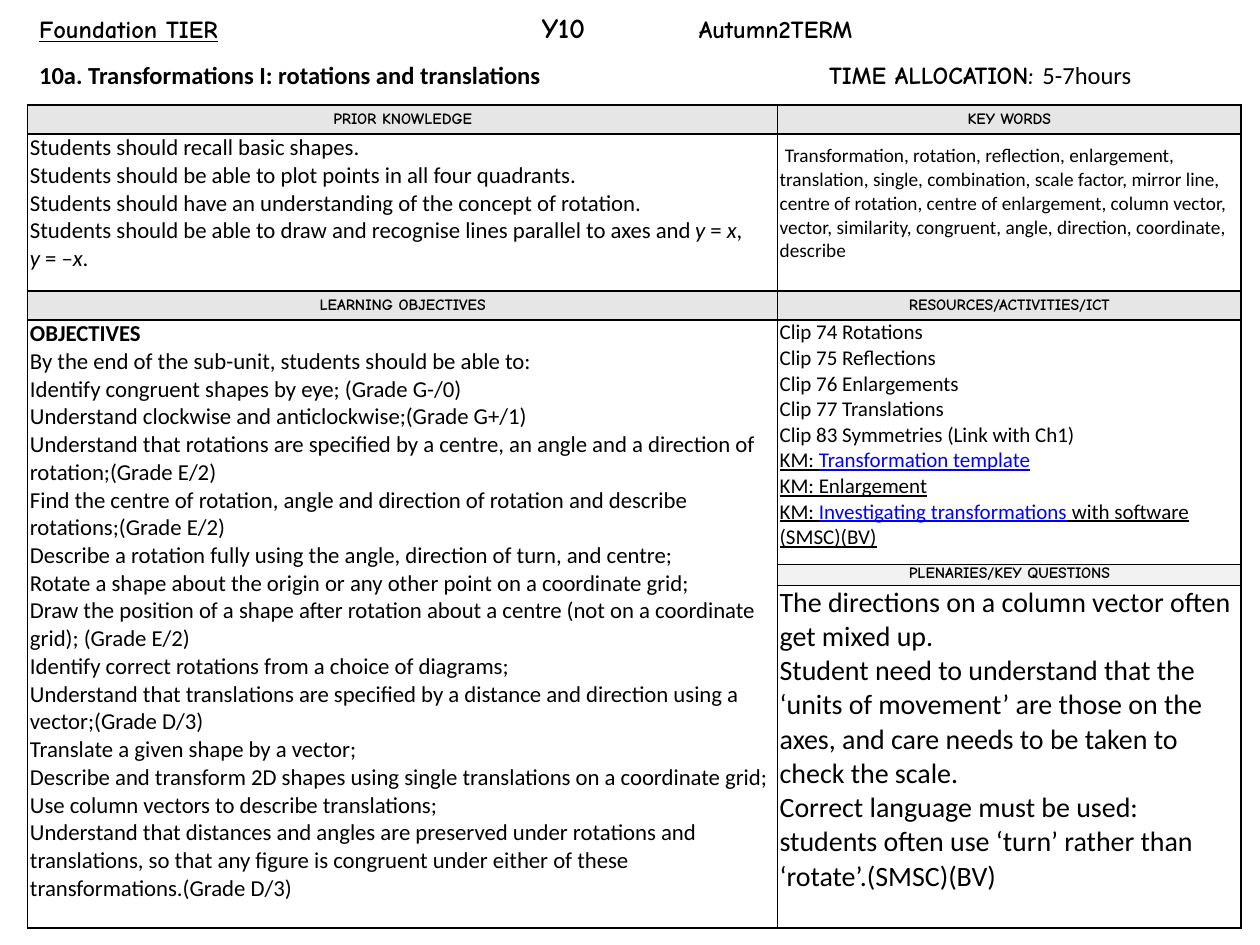
"""Build a scheme-of-work slide on rotations and translations."""
from lxml import etree
from pptx import Presentation
from pptx.dml.color import RGBColor
from pptx.enum.text import MSO_ANCHOR, PP_ALIGN
from pptx.oxml.ns import qn
from pptx.util import Pt

TOP, MID = MSO_ANCHOR.TOP, MSO_ANCHOR.MIDDLE
LEFT, CENTER = PP_ALIGN.LEFT, PP_ALIGN.CENTER
BODY, HEAD = "Calibri", "Comic Neue"
BLACK, BLUE, GREY, PALE = "000000", "0000FF", "E6E6E6", "F2F2F2"
ITALIC, LINE, LINK = {"italic": True}, {"line": True}, {"line": True, "color": BLUE}
TITLE = {"size": 14, "font": HEAD, "bold": True}

TITLES = [
    ([("Foundation TIER", {"line": True}), "\t", ("Y10", {"size": 16}), "\tAutumn2TERM"],
     (287.3, 377)),
    ([("10a. Transformations I: rotations and translations", {"font": BODY}),
      "\tTIME ALLOCATION: ", ("5-7hours", {"font": BODY, "bold": False})],
     (451.4,)),
]
PRIOR = [
    "Students should recall basic shapes.",
    "Students should be able to plot points in all four quadrants.",
    "Students should have an understanding of the concept of rotation.",
    ["Students should be able to draw and recognise lines parallel to axes and ",
     ("y", ITALIC), " = ", ("x", ITALIC), ","],
    [("y", ITALIC), " = –", ("x", ITALIC), "."],
]
WORDS = [[
    (" ", {"size": 9, "font": HEAD}),
    "Transformation, rotation, reflection, enlargement, translation, single, "
    "combination, scale factor, mirror line, centre of rotation, centre of "
    "enlargement, column vector, vector, similarity, congruent, angle, "
    "direction, coordinate, describe",
]]
GOALS = [
    [("OBJECTIVES", {"bold": True})],
    "By the end of the sub-unit, students should be able to:",
    "Identify congruent shapes by eye; (Grade G-/0)",
    "Understand clockwise and anticlockwise;(Grade G+/1)",
    "Understand that rotations are specified by a centre, an angle and a direction of rotation;(Grade E/2)",
    "Find the centre of rotation, angle and direction of rotation and describe rotations;(Grade E/2)",
    "Describe a rotation fully using the angle, direction of turn, and centre;",
    "Rotate a shape about the origin or any other point on a coordinate grid;",
    "Draw the position of a shape after rotation about a centre (not on a coordinate grid); (Grade E/2)",
    "Identify correct rotations from a choice of diagrams;",
    "Understand that translations are specified by a distance and direction using a vector;(Grade D/3)",
    "Translate a given shape by a vector;",
    "Describe and transform 2D shapes using single translations on a coordinate grid;",
    "Use column vectors to describe translations;",
    "Understand that distances and angles are preserved under rotations and translations, "
    "so that any figure is congruent under either of these transformations.(Grade D/3)",
]
CLIPS = [
    "Clip 74 Rotations",
    "Clip 75 Reflections",
    "Clip 76 Enlargements",
    "Clip 77 Translations",
    "Clip 83 Symmetries (Link with Ch1)",
    [("KM: ", LINE), ("Transformation template", LINK)],
    [("KM: Enlargement", LINE)],
    [("KM: ", LINE), ("Investigating transformations", LINK),
     (" with software (SMSC)(BV)", LINE)],
]
NOTES = [
    "The directions on a column vector often get mixed up.",
    "Student need to understand that the ‘units of movement’ are those on the axes, "
    "and care needs to be taken to check the scale.",
    "Correct language must be used: students often use ‘turn’ rather than ‘rotate’.(SMSC)(BV)",
]
LABELS = [
    (0, 0, "PRIOR KNOWLEDGE", GREY, MID),
    (0, 1, "KEY WORDS", GREY, MID),
    (2, 0, "LEARNING OBJECTIVES", GREY, MID),
    (2, 1, "RESOURCES/ACTIVITIES/ICT", GREY, MID),
    (4, 1, "PLENARIES/KEY QUESTIONS", PALE, TOP),
]
BLOCKS = [
    (1, 0, PRIOR, 13, TOP, 0),
    (1, 1, WORDS, 11, MID, 10),
    (3, 0, GOALS, 13, TOP, 0),
    (3, 1, CLIPS, 12, TOP, 0),
    (5, 1, NOTES, 16, TOP, 0),
]
COLS = (428.4, 265)
ROWS = (16.6, 89.7, 16.6, 139.6, 12.2, 195.8)


def tint(code):
    """Turn a hex string into a colour."""
    return RGBColor.from_string(code)


def write(para, text, size=13, font=BODY, color=BLACK, bold=False, italic=False,
          line=False):
    """Add one formatted run to a paragraph."""
    run = para.add_run()
    run.text = text
    face = run.font
    face.size, face.name = Pt(size), font
    face.bold, face.italic, face.underline = bold, italic, line
    face.color.rgb = tint(color)


def fill(frame, paras, align=LEFT, **base):
    """Write a list of paragraphs, each a string or a list of runs."""
    for i, runs in enumerate(paras):
        para = frame.add_paragraph() if i else frame.paragraphs[0]
        para.alignment = align
        for run in [runs] if isinstance(runs, str) else runs:
            text, extra = (run, {}) if isinstance(run, str) else run
            write(para, text, **{**base, **extra})


def border(cell):
    """Draw a black line on all four sides of a cell."""
    props = cell._tc.get_or_add_tcPr()
    for side in "LRTB":
        edge = etree.SubElement(props, qn("a:ln" + side), w=str(Pt(1)))
        solid = etree.SubElement(edge, qn("a:solidFill"))
        etree.SubElement(solid, qn("a:srgbClr"), val=BLACK)


def title(slide):
    """Add the two heading lines with their tab stops."""
    box = slide.shapes.add_textbox(Pt(15.84), Pt(0), Pt(704.16), Pt(66))
    frame = box.text_frame
    frame.word_wrap = True
    frame.margin_left = frame.margin_right = Pt(6.5)
    frame.margin_top = frame.margin_bottom = Pt(3)
    fill(frame, [runs for runs, _ in TITLES], **TITLE)
    for para, (_, stops) in zip(frame.paragraphs, TITLES):
        para.line_spacing = 1.15
        para.space_after = Pt(7)
        tabs = etree.SubElement(para._p.get_or_add_pPr(), qn("a:tabLst"))
        for stop in stops:
            etree.SubElement(tabs, qn("a:tab"), pos=str(Pt(stop)), algn="l")


def grid(slide):
    """Add the planning table."""
    table = slide.shapes.add_table(len(ROWS), len(COLS), Pt(15.84), Pt(60),
                                   Pt(sum(COLS)), Pt(sum(ROWS))).table
    table.first_row = table.horz_banding = False
    for col, width in zip(table.columns, COLS):
        col.width = Pt(width)
    for row, height in zip(table.rows, ROWS):
        row.height = Pt(height)
    for cell in table.iter_cells():
        cell.margin_left = cell.margin_right = Pt(1.3)
        cell.margin_top = cell.margin_bottom = Pt(0)
        border(cell)
        cell.fill.background()
    table.cell(3, 0).merge(table.cell(5, 0))
    for row, col, text, shade, anchor in LABELS:
        cell = table.cell(row, col)
        cell.fill.solid()
        cell.fill.fore_color.rgb = tint(shade)
        cell.vertical_anchor = anchor
        fill(cell.text_frame, [text], CENTER, size=9, font=HEAD, bold=True)
    for row, col, paras, size, anchor, foot in BLOCKS:
        cell = table.cell(row, col)
        cell.vertical_anchor = anchor
        cell.margin_bottom = Pt(foot)
        fill(cell.text_frame, paras, size=size)


def main():
    """Build and save the deck."""
    deck = Presentation()
    deck.slide_width, deck.slide_height = Pt(720), Pt(540)
    slide = deck.slides.add_slide(deck.slide_layouts[6])
    grid(slide)
    title(slide)
    deck.save("out.pptx")


if __name__ == "__main__":
    main()
